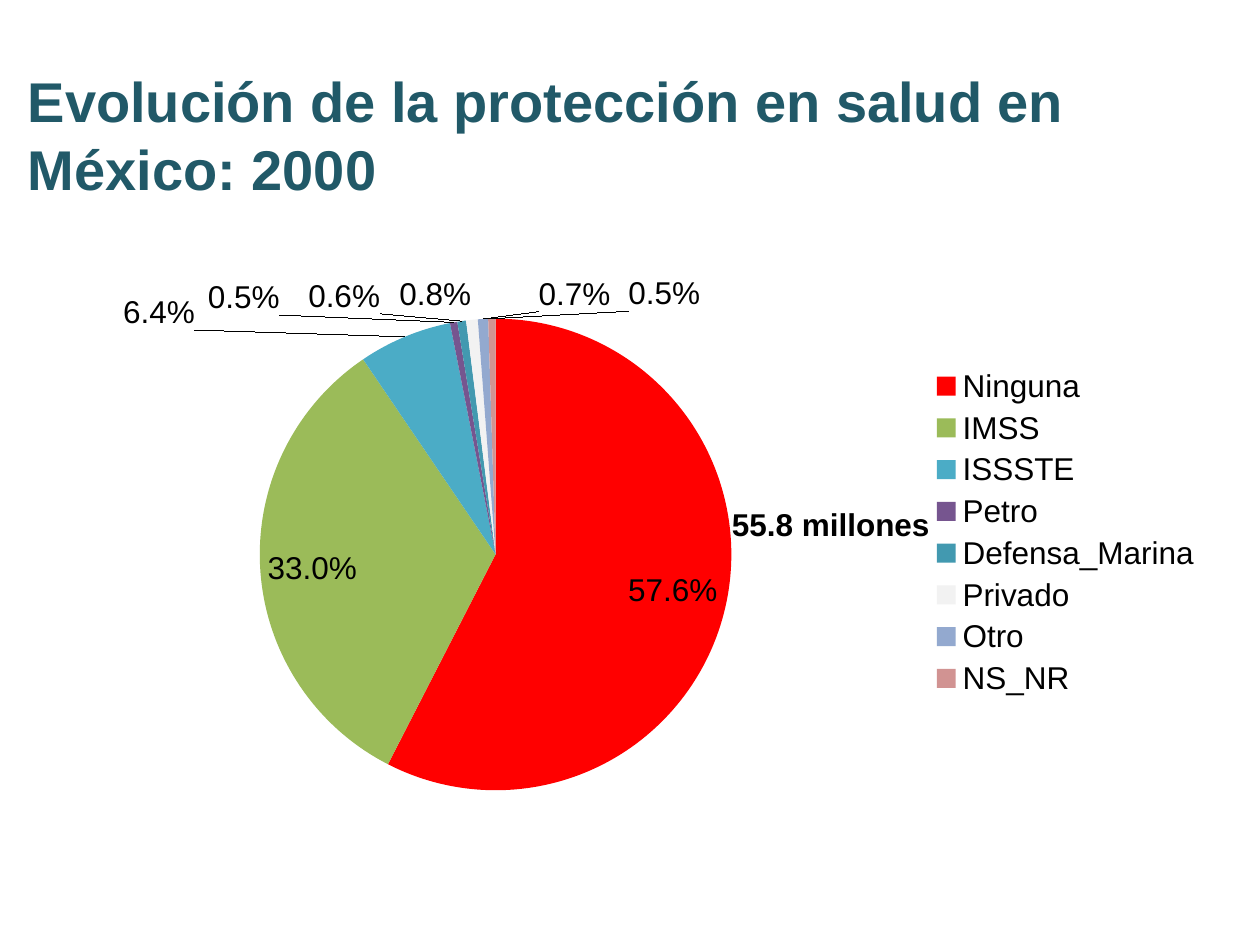
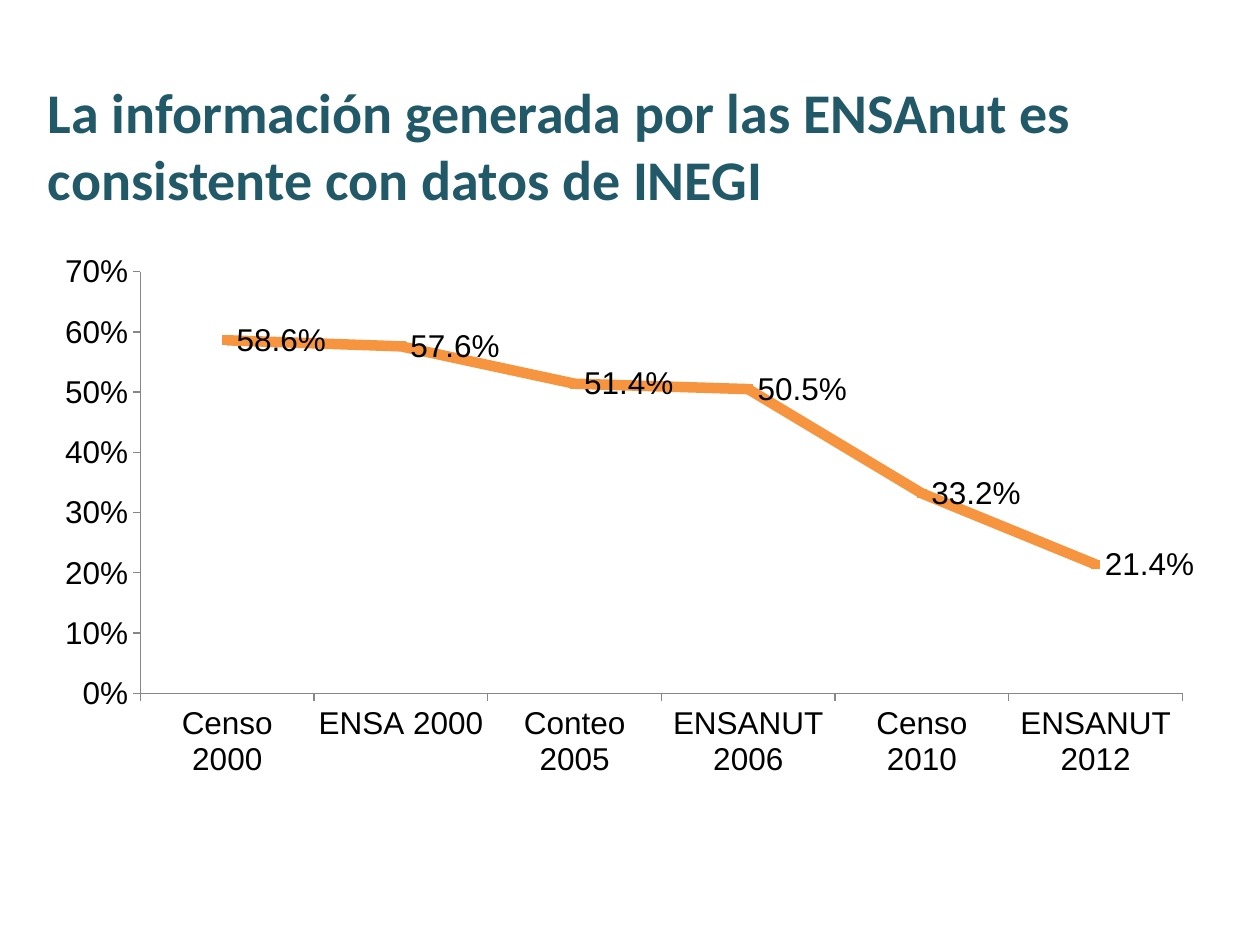
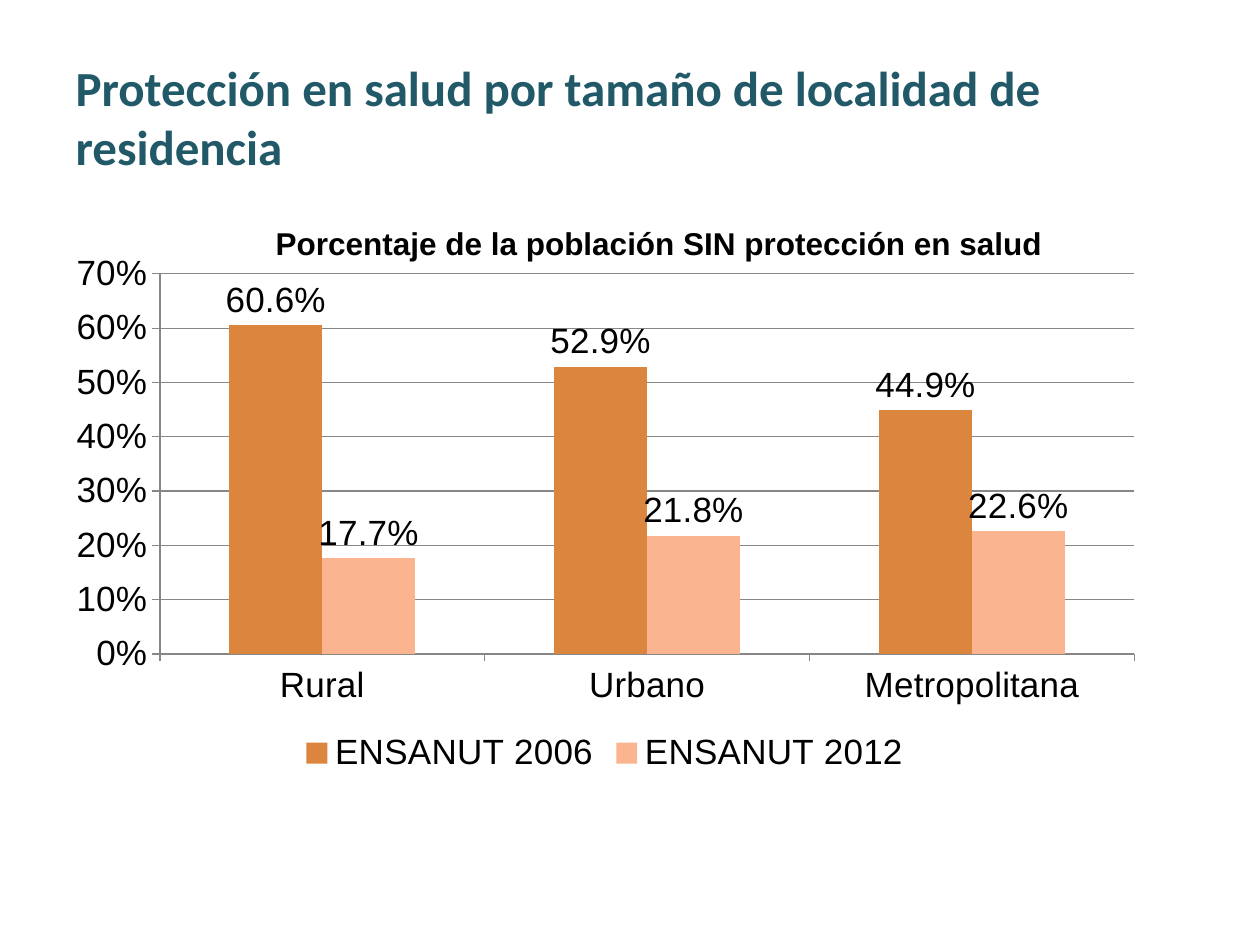
"""Build three slides of charts on health protection in Mexico."""
from dataclasses import dataclass

from lxml import etree
from pptx import Presentation
from pptx.chart.chart import Chart
from pptx.chart.data import CategoryChartData
from pptx.dml.color import RGBColor
from pptx.enum.chart import XL_CHART_TYPE as ChartType
from pptx.enum.chart import XL_LABEL_POSITION as LabelPosition
from pptx.enum.chart import XL_LEGEND_POSITION as LegendPosition
from pptx.enum.chart import XL_MARKER_STYLE as MarkerStyle
from pptx.enum.chart import XL_TICK_MARK as TickMark
from pptx.enum.text import MSO_ANCHOR as Anchor
from pptx.enum.text import MSO_AUTO_SIZE as AutoSize
from pptx.enum.text import PP_ALIGN as Align
from pptx.oxml.ns import qn
from pptx.slide import Slide
from pptx.text.text import TextFrame
from pptx.util import Inches, Pt


@dataclass(frozen=True)
class Theme:
    """Colours, fonts and type sizes shared by the slides."""
    title: str = "215968"
    text: str = "000000"
    axis: str = "878787"
    line: str = "F79440"
    bars: tuple[str, ...] = ("DC853E", "FAB590")
    slices: tuple[str, ...] = ("FF0000", "9BBB59", "4BACC6", "76558F",
                               "4299B0", "F2F2F2", "93A9CF", "D19392")
    body_font: str = "Arial"
    title_font: str = "Calibri"
    title_size: int = 32
    small_title_size: int = 28
    body_size: int = 18
    large_body_size: int = 20
    line_width: float = 6
    axis_width: float = 0.75


@dataclass(frozen=True)
class Box:
    """A rectangle in inches, or in fractions of a chart."""
    left: float
    top: float
    width: float
    height: float

    def lengths(self) -> tuple[Inches, ...]:
        """Give the rectangle as slide lengths."""
        return tuple(Inches(value) for value in
                     (self.left, self.top, self.width, self.height))


@dataclass(frozen=True)
class ChartSpec:
    """The data and frame of one chart."""
    kind: ChartType
    box: Box
    plot_area: Box
    categories: tuple[str, ...]
    series: dict[str, tuple[float, ...]]
    size: int


THEME = Theme()
LABEL_FORMAT = "0.0%"
LABEL_SHIFTS = {2: -0.18, 3: -0.15, 4: -0.07, 5: 0.0, 6: 0.08, 7: 0.15}

PIE = ChartSpec(
    ChartType.PIE, Box(0.51, 2.02, 9.13, 4.41), Box(0.17, 0.11, 0.41, 0.86),
    ("Ninguna", "IMSS", "ISSSTE", "Petro", "Defensa_Marina", "Privado", "Otro", "NS_NR"),
    {"Series 1": (0.576, 0.33, 0.064, 0.005, 0.006, 0.008, 0.007, 0.005)},
    THEME.body_size)
TREND = ChartSpec(
    ChartType.LINE_MARKERS, Box(0.33, 1.94, 9.24, 4.32), Box(0.085, 0.05, 0.895, 0.775),
    ("Censo 2000", "ENSA 2000", "Conteo 2005", "ENSANUT 2006", "Censo 2010", "ENSANUT 2012"),
    {"Series 1": (0.586, 0.576, 0.514, 0.505, 0.332, 0.214)},
    THEME.body_size)
LOCALITIES = ChartSpec(
    ChartType.COLUMN_CLUSTERED, Box(0.43, 1.94, 8.74, 4.25), Box(0.096, 0.055, 0.885, 0.71),
    ("Rural", "Urbano", "Metropolitana"),
    {"ENSANUT 2006": (0.606, 0.529, 0.449), "ENSANUT 2012": (0.177, 0.218, 0.226)},
    THEME.large_body_size)


def rgb(color: str) -> RGBColor:
    """Turn a hex string into a colour."""
    return RGBColor.from_string(color)


def write(frame: TextFrame, text: str, font: str, size: int, color: str) -> None:
    """Write one bold, left-aligned run."""
    paragraph = frame.paragraphs[0]
    paragraph.alignment = Align.LEFT
    run = paragraph.add_run()
    run.text = text
    run.font.name = font
    run.font.size = Pt(size)
    run.font.bold = True
    run.font.color.rgb = rgb(color)


def add_titled_slide(presentation: Presentation, text: str, box: Box,
                     font: str = THEME.title_font, size: int = THEME.title_size) -> Slide:
    """Add a slide with its title placed and formatted."""
    slide = presentation.slides.add_slide(presentation.slide_layouts[5])
    title = slide.shapes.title
    title.left, title.top, title.width, title.height = box.lengths()
    title.text_frame.auto_size = AutoSize.NONE
    title.text_frame.vertical_anchor = Anchor.MIDDLE
    write(title.text_frame, text, font, size, THEME.title)
    return slide


def add_note(slide: Slide, text: str, box: Box, auto_size: AutoSize) -> None:
    """Add an unwrapped bold text box."""
    frame = slide.shapes.add_textbox(*box.lengths()).text_frame
    frame.word_wrap = False
    frame.auto_size = auto_size
    write(frame, text, THEME.body_font, THEME.body_size, THEME.text)


def fill_layout(layout: etree.ElementBase, values: dict[str, str | float]) -> None:
    """Put manual positions into a chart layout element."""
    manual = etree.SubElement(layout, qn("c:manualLayout"))
    for name, value in values.items():
        etree.SubElement(manual, qn(f"c:{name}")).set("val", str(value))


def place_plot_area(chart: Chart, area: Box) -> None:
    """Fix the inner plot area inside the chart."""
    plot_area = chart.plots[0]._element.getparent()
    for old_layout in plot_area.findall(qn("c:layout")):
        plot_area.remove(old_layout)
    layout = etree.Element(qn("c:layout"))
    plot_area.insert(0, layout)
    fill_layout(layout, {
        "layoutTarget": "inner", "xMode": "edge", "yMode": "edge",
        "x": area.left, "y": area.top, "w": area.width, "h": area.height})


def add_chart(slide: Slide, spec: ChartSpec, label_position: LabelPosition) -> Chart:
    """Add a chart with its font, plot area and value labels."""
    data = CategoryChartData(number_format=LABEL_FORMAT)
    data.categories = spec.categories
    for name, values in spec.series.items():
        data.add_series(name, values)
    chart = slide.shapes.add_chart(spec.kind, *spec.box.lengths(), data).chart
    chart.has_title = False
    chart.has_legend = False
    chart.font.name = THEME.body_font
    chart.font.size = Pt(spec.size)
    chart.font.color.rgb = rgb(THEME.text)
    chart.plots[0].vary_by_categories = spec.kind == ChartType.PIE
    place_plot_area(chart, spec.plot_area)
    for series in chart.plots[0].series:
        labels = series.data_labels
        labels.show_value = True
        labels.number_format = LABEL_FORMAT
        labels.number_format_is_linked = False
        labels.position = label_position
    return chart


def add_legend(chart: Chart, position: LegendPosition) -> None:
    """Show the legend beside the plot."""
    chart.has_legend = True
    chart.legend.position = position
    chart.legend.include_in_layout = False


def style_axes(chart: Chart, gridlines: bool) -> None:
    """Format both axes, with percentages from 0 to 70."""
    value_axis = chart.value_axis
    value_axis.minimum_scale = 0
    value_axis.maximum_scale = 0.7
    value_axis.major_unit = 0.1
    value_axis.has_major_gridlines = gridlines
    value_axis.tick_labels.number_format = "0%"
    value_axis.tick_labels.number_format_is_linked = False
    lines = [value_axis.format.line, chart.category_axis.format.line]
    if gridlines:
        lines.append(value_axis.major_gridlines.format.line)
    for line in lines:
        line.color.rgb = rgb(THEME.axis)
        line.width = Pt(THEME.axis_width)
    for axis in (value_axis, chart.category_axis):
        axis.major_tick_mark = TickMark.OUTSIDE
        axis.minor_tick_mark = TickMark.NONE


def paint(part, color: str) -> None:
    """Fill a chart part with one colour."""
    part.format.fill.solid()
    part.format.fill.fore_color.rgb = rgb(color)


def spread_small_labels(chart: Chart) -> None:
    """Spread the labels of the thin slices in a row above the pie."""
    series = chart.plots[0].series[0]
    for index, shift in LABEL_SHIFTS.items():
        series.points[index].data_label.position = LabelPosition.OUTSIDE_END
    for label in series._element.iter(qn("c:dLbl")):
        index_element = label.find(qn("c:idx"))
        layout = etree.Element(qn("c:layout"))
        fill_layout(layout, {"x": LABEL_SHIFTS[int(index_element.get("val"))], "y": 0})
        number_format = etree.Element(
            qn("c:numFmt"), formatCode=LABEL_FORMAT, sourceLinked="0")
        index_element.addnext(layout)
        layout.addnext(number_format)


def build_protection_slide(presentation: Presentation) -> None:
    """Build the pie of protection in 2000."""
    slide = add_titled_slide(
        presentation, "Evolución de la protección en salud en México: 2000",
        Box(0.12, 0.44, 9.45, 1.25), font=THEME.body_font)
    chart = add_chart(slide, PIE, LabelPosition.INSIDE_END)
    for index, color in enumerate(THEME.slices):
        paint(chart.plots[0].series[0].points[index], color)
    spread_small_labels(chart)
    add_legend(chart, LegendPosition.RIGHT)
    add_note(slide, "55.8 millones", Box(5.71, 3.96, 1.79, 0.4), AutoSize.SHAPE_TO_FIT_TEXT)


def build_trend_slide(presentation: Presentation) -> None:
    """Build the line of surveys and censuses."""
    slide = add_titled_slide(
        presentation,
        "La información generada por las ENSAnut es consistente con datos de INEGI",
        Box(0.28, 0.52, 9, 1.25))
    chart = add_chart(slide, TREND, LabelPosition.RIGHT)
    style_axes(chart, gridlines=False)
    series = chart.plots[0].series[0]
    series.smooth = False
    series.format.line.color.rgb = rgb(THEME.line)
    series.format.line.width = Pt(THEME.line_width)
    series.marker.style = MarkerStyle.SQUARE
    series.marker.size = 5
    paint(series.marker, THEME.line)
    series.marker.format.line.fill.background()


def build_locality_slide(presentation: Presentation) -> None:
    """Build the columns by size of locality."""
    slide = add_titled_slide(
        presentation, "Protección en salud por tamaño de localidad de residencia",
        Box(0.5, 0.3, 9, 1.25), size=THEME.small_title_size)
    chart = add_chart(slide, LOCALITIES, LabelPosition.OUTSIDE_END)
    style_axes(chart, gridlines=True)
    chart.plots[0].gap_width = 150
    chart.plots[0].overlap = 0
    for series, color in zip(chart.plots[0].series, THEME.bars):
        paint(series, color)
    add_legend(chart, LegendPosition.BOTTOM)
    add_note(slide, "Porcentaje de la población SIN protección en salud",
             Box(2.09, 1.73, 1, 1), AutoSize.NONE)


def main() -> None:
    """Build and save the presentation."""
    presentation = Presentation()
    presentation.slide_width = Inches(10)
    presentation.slide_height = Inches(7.5)
    build_protection_slide(presentation)
    build_trend_slide(presentation)
    build_locality_slide(presentation)
    presentation.save("out.pptx")


if __name__ == "__main__":
    main()
